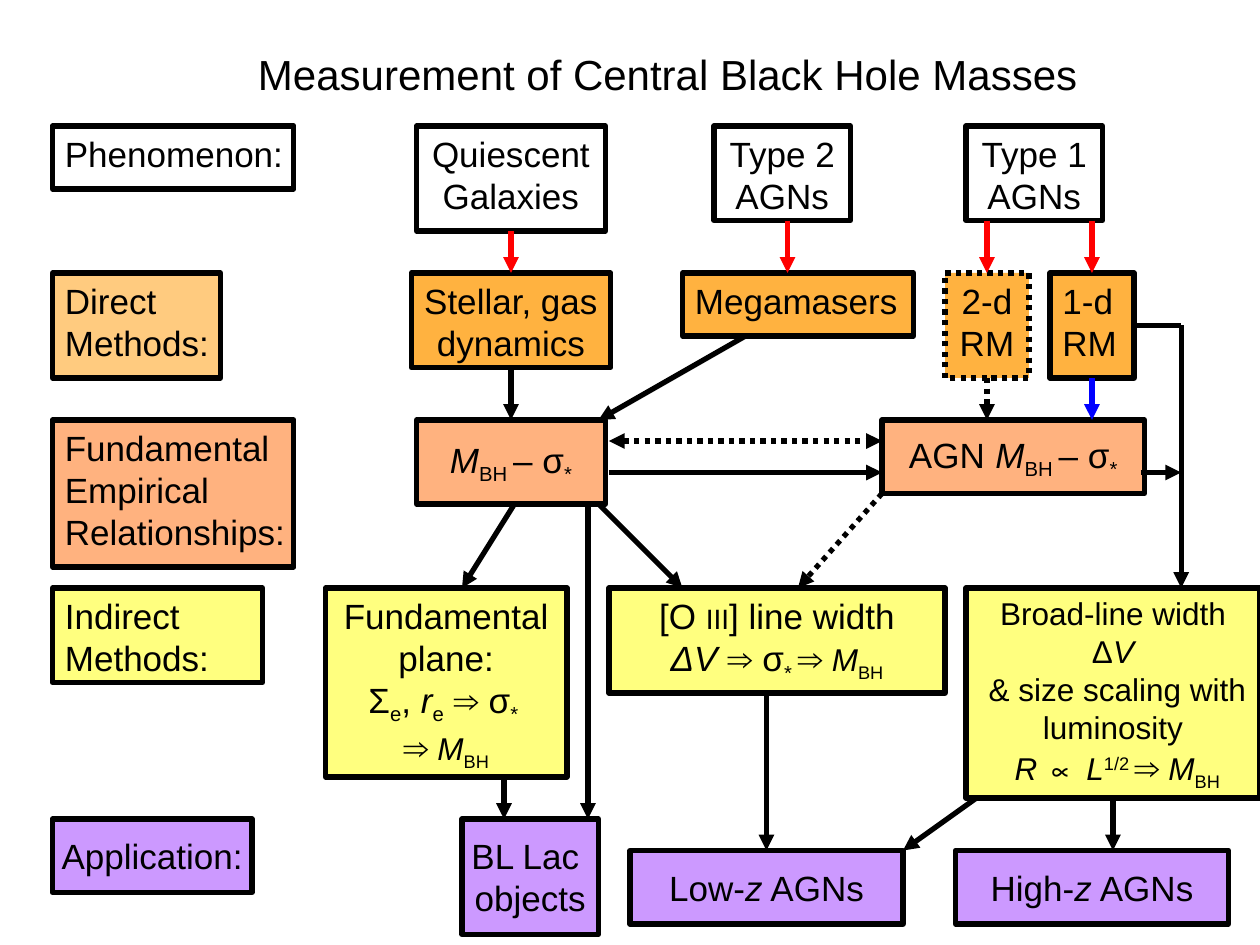
from dataclasses import dataclass

from lxml import etree
from pptx import Presentation
from pptx.dml.color import RGBColor
from pptx.enum.dml import MSO_LINE
from pptx.enum.shapes import MSO_CONNECTOR, MSO_SHAPE
from pptx.enum.text import MSO_ANCHOR, PP_ALIGN
from pptx.oxml.ns import qn
from pptx.util import Pt

RECTANGLE, STRAIGHT = MSO_SHAPE.RECTANGLE, MSO_CONNECTOR.STRAIGHT
LEFT, CENTER = PP_ALIGN.LEFT, PP_ALIGN.CENTER
TOP, MIDDLE = MSO_ANCHOR.TOP, MSO_ANCHOR.MIDDLE
DOTTED = MSO_LINE.ROUND_DOT
TOP_SIDE, BOTTOM_SIDE, RIGHT_SIDE = 0, 2, 3


@dataclass(frozen=True)
class Theme:
    font: str = "Arial"
    title: int = 24
    body: int = 20
    small: int = 18
    numeral: int = 16
    line: int = 3
    black: str = "000000"
    red: str = "FF0000"
    blue: str = "0000FF"
    # Fills are a colour and its opacity in percent
    white: tuple = ("FFFFFF", 100)
    pale_orange: tuple = ("FF9900", 50)
    orange: tuple = ("FF9900", 75)
    salmon: tuple = ("FF6600", 50)
    yellow: tuple = ("FFFF00", 50)
    violet: tuple = ("CC99FF", 100)


theme = Theme()


def add_text(paragraph, text, size=theme.body, italic=False, baseline=0, font=theme.font):
    """Append one run; baseline is a shift in percent of the type size."""
    run = paragraph.add_run()
    run.text = text
    run.font.name = font
    run.font.size = Pt(size)
    run.font.italic = italic
    run.font.color.rgb = RGBColor.from_string(theme.black)
    if baseline:
        run._r.get_or_add_rPr().set("baseline", str(baseline * 1000))


presentation = Presentation()
presentation.slide_width, presentation.slide_height = Pt(720), Pt(540)
slide = presentation.slides.add_slide(presentation.slide_layouts[6])

title = slide.shapes.add_textbox(Pt(140), Pt(24), Pt(483), Pt(36))
title.text_frame.word_wrap = False
title.text_frame.paragraphs[0].alignment = CENTER
add_text(title.text_frame.paragraphs[0], "Measurement of Central Black Hole Masses", size=theme.title)

# Runs are plain strings or (text, format) pairs
ITALIC = {"italic": True}
SUB = {"baseline": -25}
SMALL = {"size": theme.small}
SMALL_ITALIC = SMALL | ITALIC
SMALL_SUB = SMALL | SUB
mass_sigma = [("M", ITALIC), ("BH ", SUB), "– σ", ("*", SUB)]
gives_mass = ["⇒", (" ", SMALL), ("M", SMALL_ITALIC), ("BH", SMALL_SUB)]

PHENOMENON, DIRECT, EMPIRICAL, INDIRECT, APPLICATION = 72, 156, 240, 336, 468
AGN_APPLICATION = APPLICATION + 18

# name, left, top, width, height, fill, alignment, anchor, paragraphs
boxes = [
    ("phenomenon", 30, PHENOMENON, 138, 36, theme.white, LEFT, TOP, [["Phenomenon:"]]),
    ("quiescent", 238, PHENOMENON, 108, 60, theme.white, CENTER, TOP, [["Quiescent"], ["Galaxies"]]),
    ("type 2", 408, PHENOMENON, 78, 54, theme.white, CENTER, TOP, [["Type 2"], ["AGNs"]]),
    ("type 1", 552, PHENOMENON, 78, 54, theme.white, CENTER, TOP, [["Type 1"], ["AGNs"]]),
    ("direct", 30, DIRECT, 96, 60, theme.pale_orange, LEFT, TOP, [["Direct"], ["Methods:"]]),
    ("stellar", 235, DIRECT, 114, 54, theme.orange, CENTER, TOP, [["Stellar, gas"], ["dynamics"]]),
    ("megamasers", 390, DIRECT, 132, 36, theme.orange, LEFT, TOP, [["Megamasers"]]),
    ("2-d", 540, DIRECT, 48, 60, theme.orange, CENTER, TOP, [["2-d"], ["RM"]]),
    ("1-d", 600, DIRECT, 48, 60, theme.orange, LEFT, TOP, [["1-d"], ["RM"]]),
    ("empirical", 30, EMPIRICAL, 138, 84, theme.salmon, LEFT, TOP,
     [["Fundamental"], ["Empirical"], ["Relationships:"]]),
    ("mass-sigma", 238, EMPIRICAL, 108, 48, theme.salmon, CENTER, MIDDLE, [mass_sigma]),
    ("agn mass-sigma", 504, EMPIRICAL, 150, 42, theme.salmon, CENTER, TOP,
     [["AGN", (" ", {"size": theme.title, "italic": True, "font": "Times New Roman"}), *mass_sigma]]),
    ("indirect", 30, INDIRECT, 120, 54, theme.yellow, LEFT, TOP, [["Indirect"], ["Methods:"]]),
    ("plane", 186, INDIRECT, 138, 108, theme.yellow, CENTER, TOP,
     [["Fundamental"], ["plane:"],
      ["Σ", ("e", SUB), ", ", ("r", ITALIC), ("e", SUB), " ⇒ σ", ("* ", SUB)],
      gives_mass]),
    ("oxygen", 348, INDIRECT, 192, 60, theme.yellow, CENTER, TOP,
     [["[O ", ("III", {"size": theme.numeral}), "] line width"],
      [("ΔV", ITALIC), " ⇒ σ", ("* ", SUB), *gives_mass]]),
    ("broad-line", 552, INDIRECT, 168, 120, theme.yellow, CENTER, TOP,
     [[("Broad-line width Δ", SMALL), ("V", SMALL_ITALIC)],
      [(" & size scaling with", SMALL)],
      [("luminosity", SMALL)],
      [(" ", SMALL), ("R", SMALL_ITALIC), (" ∝ ", SMALL), ("L", SMALL_ITALIC),
       ("1/2 ", SMALL | {"baseline": 30}), *gives_mass]]),
    ("application", 30, APPLICATION, 114, 42, theme.violet, CENTER, MIDDLE, [["Application:"]]),
    ("bl lac", 264, APPLICATION, 78, 66, theme.violet, CENTER, MIDDLE, [["BL Lac "], ["objects"]]),
    ("low-z", 360, AGN_APPLICATION, 156, 42, theme.violet, CENTER, MIDDLE,
     [["Low-", ("z", ITALIC), " AGNs"]]),
    ("high-z", 546, AGN_APPLICATION, 156, 42, theme.violet, CENTER, MIDDLE,
     [["High-", ("z", ITALIC), " AGNs"]]),
]

shapes = {}
for name, left, top, width, height, fill, alignment, anchor, paragraphs in boxes:
    shape = slide.shapes.add_shape(RECTANGLE, Pt(left), Pt(top), Pt(width), Pt(height))
    shapes[name] = shape
    shape.shadow.inherit = False
    color, opacity = fill
    shape.fill.solid()
    shape.fill.fore_color.rgb = RGBColor.from_string(color)
    if opacity < 100:
        color_element = shape._element.spPr.find(".//" + qn("a:srgbClr"))
        etree.SubElement(color_element, qn("a:alpha"), val=str(opacity * 1000))
    shape.line.color.rgb = RGBColor.from_string(theme.black)
    shape.line.width = Pt(theme.line)

    frame = shape.text_frame
    frame.word_wrap = True
    frame.vertical_anchor = anchor
    frame.margin_left = Pt(7.2 if alignment == LEFT else 2)
    frame.margin_right = Pt(0 if alignment == LEFT else 2)
    for index, runs in enumerate(paragraphs):
        paragraph = frame.add_paragraph() if index else frame.paragraphs[0]
        paragraph.alignment = alignment
        for run in runs:
            text, style = (run, {}) if isinstance(run, str) else run
            add_text(paragraph, text, **style)

shapes["2-d"].line.dash_style = DOTTED
# Narrower text area, so that ΔV goes to a line of its own
broad_frame = shapes["broad-line"].text_frame
broad_frame.margin_left = broad_frame.margin_right = Pt(6.5)

# Ends are points or (box, side) joints; then colour, dotted, arrowheads
END, BOTH, NONE = ["a:tailEnd"], ["a:headEnd", "a:tailEnd"], []
connectors = [
    (("quiescent", BOTTOM_SIDE), ("stellar", TOP_SIDE), theme.red, False, END),
    ((450, 126), (450, DIRECT), theme.red, False, END),
    ((564, 126), ("2-d", TOP_SIDE), theme.red, False, END),
    ((624, 126), ("1-d", TOP_SIDE), theme.red, False, END),
    (("stellar", BOTTOM_SIDE), ("mass-sigma", TOP_SIDE), theme.black, False, END),
    ((426, 192), (342, EMPIRICAL), theme.black, False, END),
    (("2-d", BOTTOM_SIDE), (564, EMPIRICAL), theme.black, True, END),
    (("1-d", BOTTOM_SIDE), (624, EMPIRICAL), theme.blue, False, END),
    ((348, 252), (504, 252), theme.black, True, BOTH),
    ((348, 270), (504, 270), theme.black, False, END),
    ((294, 288), (264, INDIRECT), theme.black, False, END),
    ((342, 288), (390, INDIRECT), theme.black, False, END),
    ((504, 282), (456, INDIRECT), theme.black, True, END),
    (("1-d", RIGHT_SIDE), (675, 186), theme.black, False, NONE),
    ((675, 186), (675, INDIRECT), theme.black, False, END),
    ((652, 270), (675, 270), theme.black, False, END),
    ((336, 288), (336, APPLICATION), theme.black, False, END),
    ((288, 444), (288, APPLICATION), theme.black, False, END),
    ((438, 396), ("low-z", TOP_SIDE), theme.black, False, END),
    ((558, 456), (516, AGN_APPLICATION), theme.black, False, END),
    (("broad-line", BOTTOM_SIDE), (636, AGN_APPLICATION), theme.black, False, END),
]

for begin, end, color, dotted, arrowheads in connectors:
    points = [(0, 0) if isinstance(place[0], str) else place for place in (begin, end)]
    connector = slide.shapes.add_connector(STRAIGHT, *(Pt(value) for point in points for value in point))
    for place, join in ((begin, connector.begin_connect), (end, connector.end_connect)):
        if isinstance(place[0], str):
            join(shapes[place[0]], place[1])
    connector.line.color.rgb = RGBColor.from_string(color)
    connector.line.width = Pt(theme.line)
    if dotted:
        connector.line.dash_style = DOTTED
    for arrowhead in arrowheads:
        etree.SubElement(connector.line._get_or_add_ln(), qn(arrowhead), type="triangle")
    etree.SubElement(connector._element.spPr, qn("a:effectLst"))

presentation.save("out.pptx")
